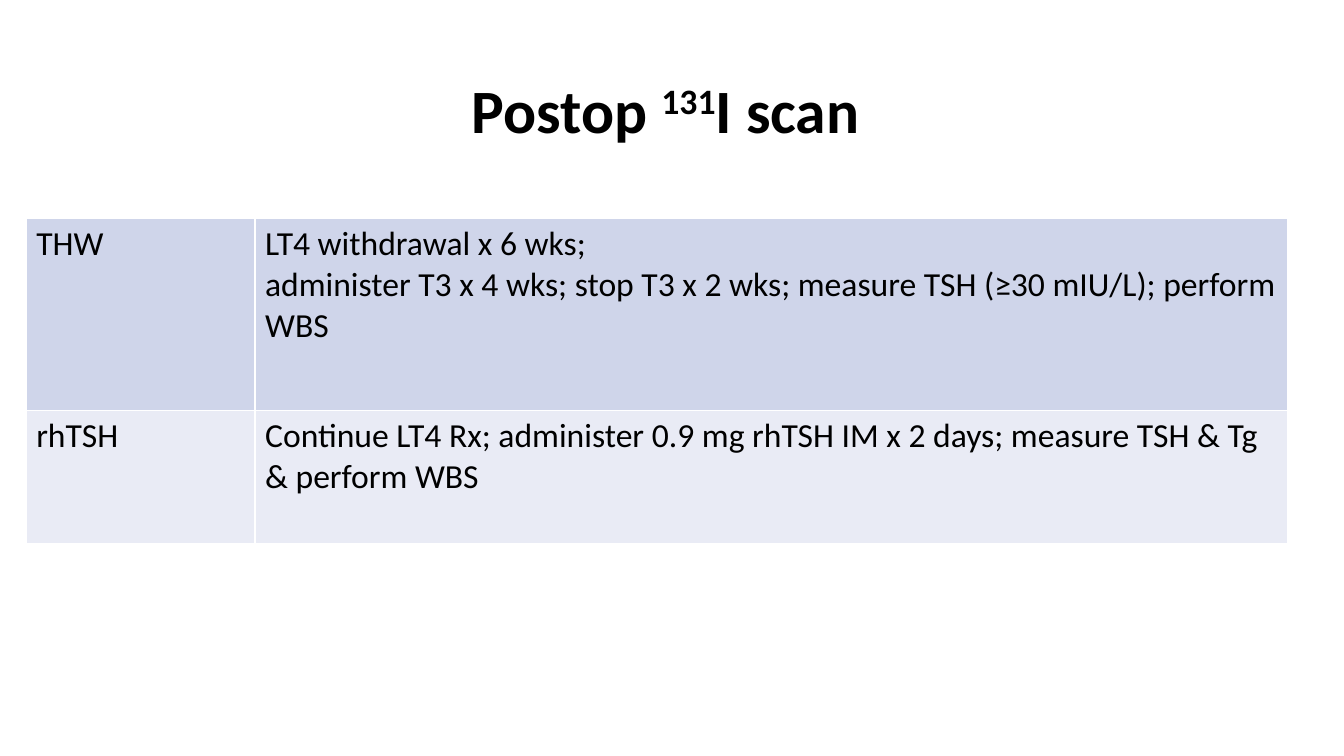
import pptx
import pptx.util
import pptx.dml.color
import pptx.enum.text

Inches = pptx.util.Inches


def color(value):
    return pptx.dml.color.RGBColor.from_string(value)


def add_text(p, text, size=24, bold=False, baseline=None):
    """Add a run to p; a newline becomes a line break, baseline is in percent."""
    for i, line in enumerate(text.split("\n")):
        if i:
            p.add_line_break()
        r = p.add_run()
        r.text = line
        r.font.name = "Calibri"
        r.font.size = pptx.util.Pt(size)
        r.font.bold = bold
        r.font.color.rgb = color("000000")
        if baseline:
            r.font._element.set("baseline", str(baseline * 1000))


prs = pptx.Presentation()
prs.slide_width = Inches(13.33)
prs.slide_height = Inches(7.5)
s = prs.slides.add_slide(prs.slide_layouts[5])

# Title
title = s.shapes.title
title.left, title.top = Inches(0.92), Inches(0.4)
title.width, title.height = Inches(11.5), Inches(1.45)
tf = title.text_frame
tf.word_wrap = True
tf.vertical_anchor = pptx.enum.text.MSO_ANCHOR.MIDDLE
p = tf.paragraphs[0]
p.alignment = pptx.enum.text.PP_ALIGN.CENTER
p.line_spacing = 0.9
for text, baseline in (("Postop ", None), ("131", 30), ("I scan ", None)):
    add_text(p, text, size=44, bold=True, baseline=baseline)

# Preparation methods: label, protocol, row height, fill
methods = [
    ("THW",
     "LT4 withdrawal x 6 wks;\nadminister T3 x 4 wks; stop T3 x 2 wks; "
     "measure TSH (≥30 mIU/L); perform WBS",
     1.9, "CFD5EA"),
    ("rhTSH",
     "Continue LT4 Rx; administer 0.9 mg rhTSH IM x 2 days; "
     "measure TSH & Tg & perform WBS",
     1.32, "E9EBF5"),
]
table = s.shapes.add_table(len(methods), 2, Inches(0.26), Inches(2.17),
                           Inches(12.51), Inches(3.22)).table
table.first_row = False
for column, width in zip(table.columns, (2.27, 10.24)):
    column.width = Inches(width)
for row, (label, protocol, height, fill) in zip(table.rows, methods):
    row.height = Inches(height)
    for cell, text in zip(row.cells, (label, protocol)):
        cell.fill.solid()
        cell.fill.fore_color.rgb = color(fill)
        add_text(cell.text_frame.paragraphs[0], text)

prs.save("out.pptx")
